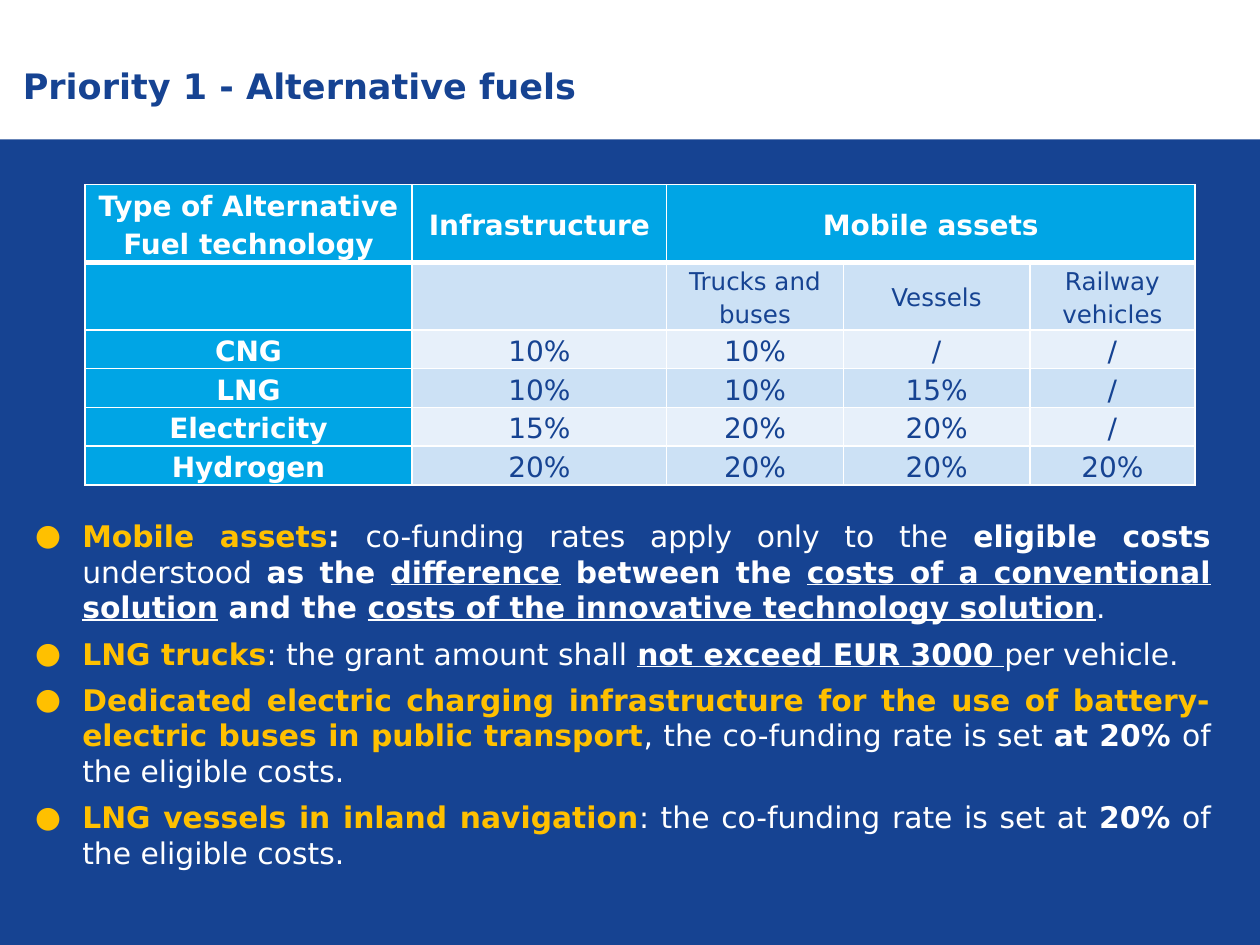
from lxml import etree
from pptx import Presentation
from pptx import util as u
from pptx.dml.color import RGBColor
from pptx.enum import shapes, text
from pptx.oxml import ns

NAVY = RGBColor(0x16, 0x43, 0x92)
WHITE = RGBColor(0xFF, 0xFF, 0xFF)
CYAN = RGBColor(0x00, 0xA5, 0xE5)
PALE = RGBColor(0xCC, 0xE1, 0xF5)
PALER = RGBColor(0xE7, 0xF0, 0xFA)
GOLD = RGBColor(0xFF, 0xC0, 0x00)
FONT = "DejaVu Sans"

COLUMNS = [6.6, 5.13, 3.56, 3.76, 3.33]
ROWS = [1.57, 1.36] + [0.78] * 4
RATES = [
    ["Type of Alternative Fuel technology", "Infrastructure", "Mobile assets", "", ""],
    ["", "", "Trucks and buses", "Vessels", "Railway vehicles"],
    ["CNG", "10%", "10%", "/", "/"],
    ["LNG", "10%", "10%", "15%", "/"],
    ["Electricity", "15%", "20%", "20%", "/"],
    ["Hydrogen", "20%", "20%", "20%", "20%"],
]

HEAD, PLAIN, BOLD, LINED = (GOLD, True, False), (WHITE, False, False), (WHITE, True, False), (WHITE, True, True)
RULES = [
    [("Mobile assets", HEAD), (": ", BOLD), ("co-funding rates apply only to the ", PLAIN),
     ("eligible costs ", BOLD), ("understood ", PLAIN), ("as the ", BOLD), ("difference", LINED),
     (" between the ", BOLD), ("costs of a conventional solution", LINED), (" and the ", BOLD),
     ("costs of the innovative technology solution", LINED), (".", PLAIN)],
    [("LNG trucks", HEAD), (": the grant amount shall ", PLAIN),
     ("not exceed EUR 3000 ", LINED), ("per vehicle.", PLAIN)],
    [("Dedicated electric charging infrastructure for the use of battery-electric buses in public transport", HEAD),
     (", the co-funding rate is set ", PLAIN), ("at 20% ", BOLD), ("of the eligible costs.", PLAIN)],
    [("LNG vessels in inland navigation", HEAD), (": the co-funding rate is set at ", PLAIN),
     ("20%", BOLD), (" of the eligible costs.", PLAIN)],
]


def style_run(r, size, color, bold=False, underline=False):
    """Apply the slide's font to a run."""
    r.font.name, r.font.size = FONT, u.Pt(size)
    r.font.bold, r.font.underline = bold, underline
    r.font.color.rgb = color


def add_title(slide, left, top, width, height):
    """Place the white title band and its heading."""
    band = slide.shapes.add_shape(
        shapes.MSO_SHAPE.RECTANGLE, u.Cm(left), u.Cm(top), u.Cm(width), u.Cm(height))
    band.shadow.inherit = False
    band.fill.solid()
    band.fill.fore_color.rgb = WHITE
    band.line.fill.background()
    sp = slide.shapes.add_textbox(
        u.Cm(left + 0.46), u.Cm(top + 1.12), u.Cm(width - 2.54), u.Cm(1.16))
    tf = sp.text_frame
    tf.word_wrap = True
    tf.margin_left = tf.margin_right = 0
    tf.vertical_anchor = text.MSO_ANCHOR.BOTTOM
    tf.text = "Priority 1 - Alternative fuels"
    style_run(tf.paragraphs[0].runs[0], 20, NAVY, True)


def set_borders(cell, top, bottom):
    """Draw white cell borders with the given top and bottom widths."""
    tc_pr = cell._tc.get_or_add_tcPr()
    for side, width in (("L", 1), ("R", 1), ("T", top), ("B", bottom)):
        ln = etree.SubElement(tc_pr, ns.qn(f"a:ln{side}"), w=str(u.Pt(width)))
        fill = etree.SubElement(ln, ns.qn("a:solidFill"))
        etree.SubElement(fill, ns.qn("a:srgbClr"), val=str(WHITE))


def fill_cell(cell, label, row, col):
    """Style one cell of the rates table by its position."""
    heading = row == 0 or col == 0
    set_borders(cell, 3 if row == 1 else 1, 3 if row == 0 else 1)
    cell.fill.solid()
    cell.fill.fore_color.rgb = CYAN if heading else PALE if row % 2 else PALER
    cell.vertical_anchor = text.MSO_ANCHOR.MIDDLE
    cell.margin_top = cell.margin_bottom = 0
    cell.margin_left = cell.margin_right = u.Cm(0 if col == 4 else 0.18)
    if label:
        cell.text_frame.text = label
        p = cell.text_frame.paragraphs[0]
        p.alignment = text.PP_ALIGN.CENTER
        p.line_spacing, p.space_before = 1.15, u.Pt(6)
        style_run(p.runs[0], 14 if row == 1 else 16, WHITE if heading else NAVY, heading)


def add_rates(slide, left, top):
    """Place the table of co-funding rates."""
    table = slide.shapes.add_table(
        len(ROWS), len(COLUMNS), u.Cm(left), u.Cm(top), u.Cm(sum(COLUMNS)), u.Cm(sum(ROWS))).table
    table.horz_banding = False
    for column, width in zip(table.columns, COLUMNS):
        column.width = u.Cm(width)
    for row, height in zip(table.rows, ROWS):
        row.height = u.Cm(height)
    for i, labels in enumerate(RATES):
        for j, label in enumerate(labels):
            fill_cell(table.cell(i, j), label, i, j)
    table.cell(0, 2).merge(table.cell(0, 4))


def add_bullet(p):
    """Give a paragraph a hanging gold bullet."""
    p_pr = p._p.get_or_add_pPr()
    p_pr.set("marL", str(u.Cm(0.95)))
    p_pr.set("indent", str(u.Cm(-0.95)))
    color = etree.SubElement(p_pr, ns.qn("a:buClr"))
    etree.SubElement(color, ns.qn("a:srgbClr"), val=str(GOLD))
    etree.SubElement(p_pr, ns.qn("a:buFont"), typeface=FONT)
    etree.SubElement(p_pr, ns.qn("a:buChar"), char="●")


def add_rules(slide, left, top, width, height):
    """Place the bulleted funding rules."""
    sp = slide.shapes.add_textbox(u.Cm(left), u.Cm(top), u.Cm(width), u.Cm(height))
    tf = sp.text_frame
    tf.word_wrap = True
    for i, parts in enumerate(RULES):
        p = tf.add_paragraph() if i else tf.paragraphs[0]
        p.alignment, p.space_after = text.PP_ALIGN.JUSTIFY, u.Pt(6)
        add_bullet(p)
        for words, style in parts:
            r = p.add_run()
            r.text = words
            style_run(r, 17, *style)


def main():
    """Build and save the slide."""
    prs = Presentation()
    prs.slide_width, prs.slide_height = u.Cm(25.4), u.Cm(19.05)
    slide = prs.slides.add_slide(prs.slide_layouts[6])
    slide.background.fill.solid()
    slide.background.fill.fore_color.rgb = NAVY
    add_title(slide, 0, 0, 25.4, 2.81)
    add_rules(slide, 0.46, 10.31, 24.2, 8.38)
    add_rates(slide, 1.71, 3.72)
    prs.save("out.pptx")


if __name__ == "__main__":
    main()
